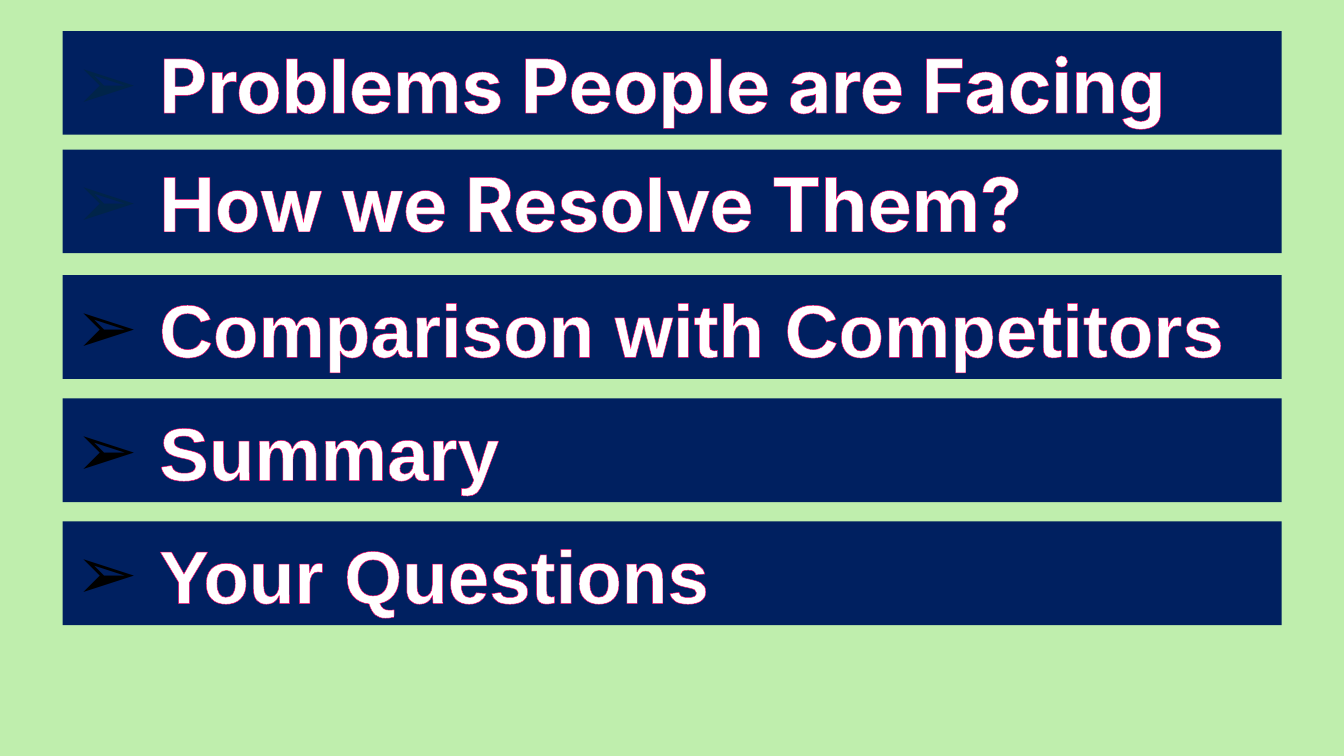
from lxml.etree import SubElement
from pptx import Presentation
from pptx.dml.color import RGBColor
from pptx.enum.shapes import MSO_SHAPE
from pptx.enum.text import MSO_ANCHOR, MSO_AUTO_SIZE, PP_ALIGN
from pptx.oxml import parse_xml
from pptx.oxml.ns import nsdecls, qn
from pptx.util import Pt

COLORS = {
    "background": "BFEEAD",
    "bar": "002060",
    "text": "FFFFFF",
    "outline": "FF0066",
    "dim": "002449",
    "black": "000000",
}
LEFT, WIDTH, HEIGHT = 33.6, 653, 55.6
AGENDA = [
    (16.6, "Problems People are Facing", "Inter", "dim", 6),
    (80.1, "How we Resolve Them?", "Inter", "dim", 6),
    (147.4, "Comparison with Competitors", "Arial", "black", 0),
    (213.4, "Summary", "Arial", "black", 0),
    (279.3, "Your Questions", "Arial", "black", 0),
]


def rgb(name):
    return RGBColor.from_string(COLORS[name])


def add_text(p, text, font="Arial", size=40, color="text", outline="outline"):
    r = p.add_run()
    r.text = text
    r.font.name = font
    r.font.size = Pt(size)
    r.font.bold = True
    r.font.color.rgb = rgb(color)
    ln = parse_xml(
        f'<a:ln {nsdecls("a")} w="{Pt(0.75)}"><a:solidFill>'
        f'<a:srgbClr val="{COLORS[outline]}"/></a:solidFill></a:ln>'
    )
    r.font._element.insert(0, ln)


class AgendaSlide:
    def __init__(self, prs):
        self.indent = Pt(44.6)
        self.s = prs.slides.add_slide(prs.slide_layouts[6])
        fill = self.s.background.fill
        fill.solid()
        fill.fore_color.rgb = rgb("background")

    def bullet(self, p, color):
        pPr = p._p.get_or_add_pPr()
        pPr.set("marL", str(self.indent))
        pPr.set("indent", str(-self.indent))
        clr = SubElement(pPr, qn("a:buClr"))
        SubElement(clr, qn("a:srgbClr")).set("val", COLORS[color])
        SubElement(pPr, qn("a:buFont")).set("typeface", "Arial")
        SubElement(pPr, qn("a:buChar")).set("char", "➢")

    def bar(self, top, text, font, bullet_color, space):
        sp = self.s.shapes.add_shape(
            MSO_SHAPE.RECTANGLE, Pt(LEFT), Pt(top), Pt(WIDTH), Pt(HEIGHT)
        )
        sp.shadow.inherit = False
        sp.fill.solid()
        sp.fill.fore_color.rgb = rgb("bar")
        sp.line.fill.background()
        tf = sp.text_frame
        tf.word_wrap = True
        tf.auto_size = MSO_AUTO_SIZE.SHAPE_TO_FIT_TEXT
        tf.vertical_anchor = MSO_ANCHOR.BOTTOM
        p = tf.paragraphs[0]
        p.alignment = PP_ALIGN.LEFT
        p.space_before = Pt(space)
        self.bullet(p, bullet_color)
        add_text(p, text, font=font)


def main():
    prs = Presentation()
    prs.slide_width, prs.slide_height = Pt(720), Pt(405)
    slide = AgendaSlide(prs)
    for item in AGENDA:
        slide.bar(*item)
    prs.save("out.pptx")


if __name__ == "__main__":
    main()
